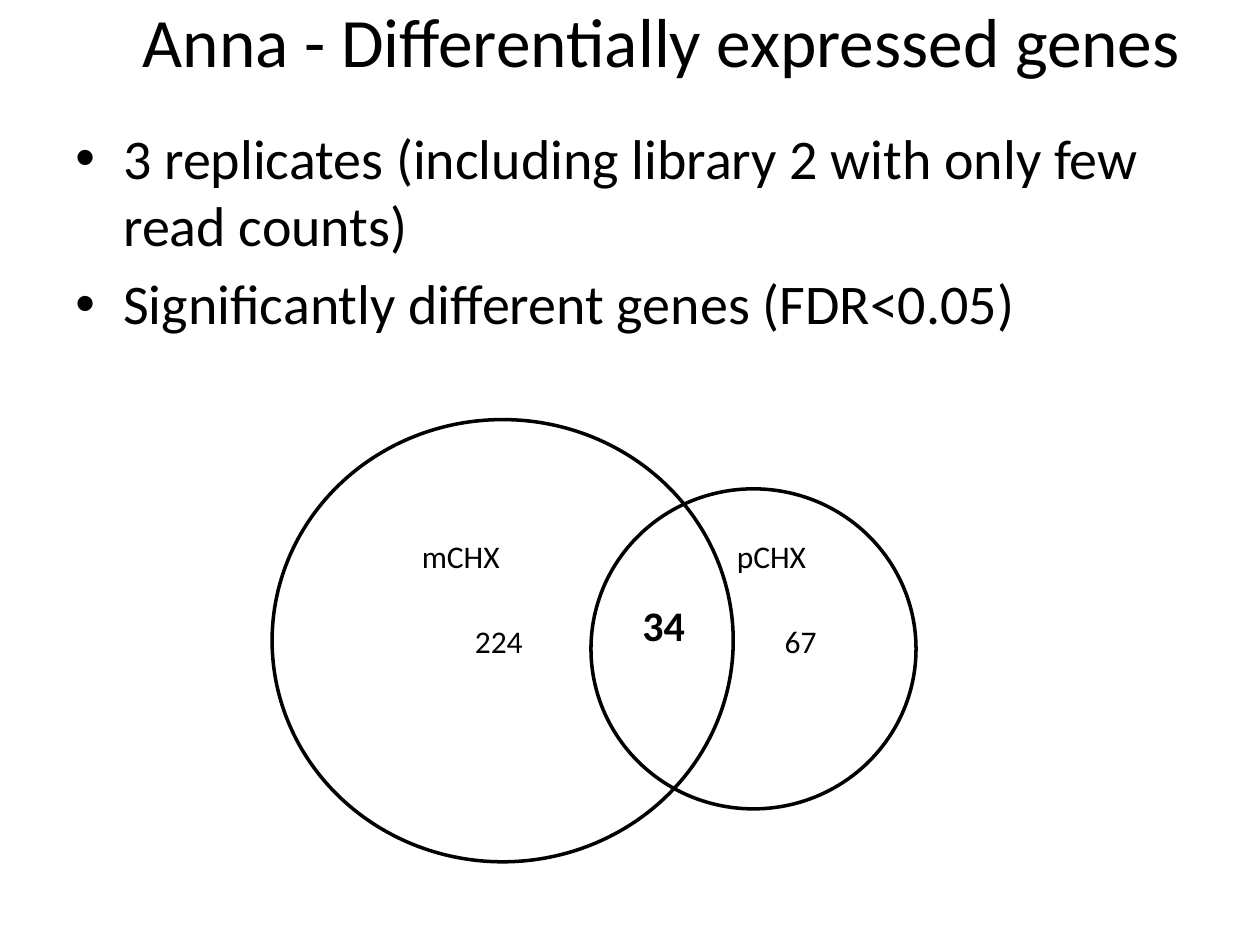
from dataclasses import dataclass

from lxml.etree import SubElement
from pptx import Presentation
from pptx.dml.color import RGBColor
from pptx.enum.shapes import MSO_SHAPE
from pptx.enum.text import MSO_ANCHOR, MSO_AUTO_SIZE, PP_ALIGN
from pptx.oxml.ns import qn
from pptx.util import Inches, Pt


@dataclass(frozen=True)
class Theme:
    font: str = "Calibri"
    ink: RGBColor = RGBColor(0, 0, 0)
    title: float = 39.6
    body: float = 32
    label: float = 18
    overlap: float = 24
    outline: float = 2


theme = Theme()


def add_run(p, text, size, bold=False):
    r = p.add_run()
    r.text = text
    r.font.name = theme.font
    r.font.size = Pt(size)
    r.font.bold = bold
    r.font.color.rgb = theme.ink


prs = Presentation()
prs.slide_width, prs.slide_height = Inches(10), Inches(7.5)
s = prs.slides.add_slide(prs.slide_layouts[5])

# Title
title = s.shapes.title
title.left, title.top = Inches(0.75), Inches(-0.31)
title.width, title.height = Inches(9), Inches(1.25)
tf = title.text_frame
tf.auto_size = MSO_AUTO_SIZE.NONE
tf.vertical_anchor = MSO_ANCHOR.MIDDLE
p = tf.paragraphs[0]
p.alignment = PP_ALIGN.CENTER
add_run(p, "Anna - Differentially expressed genes", theme.title)

# Bullets
bullets = [
    "3 replicates (including library 2 with only few read counts)",
    "Significantly different genes (FDR<0.05)",
]
body = s.shapes.add_textbox(Inches(0.5), Inches(0.93), Inches(9.28), Inches(5.77))
tf = body.text_frame
tf.word_wrap = True
for i, text in enumerate(bullets):
    p = tf.add_paragraph() if i else tf.paragraphs[0]
    p.space_before = Pt(0.2 * theme.body)
    pPr = p._p.get_or_add_pPr()
    pPr.set("marL", str(Inches(0.38)))
    pPr.set("indent", str(Inches(-0.38)))
    SubElement(pPr, qn("a:buFont"), typeface="Arial")
    SubElement(pPr, qn("a:buChar"), char="•")
    add_run(p, text, theme.body)

# Venn circles: left, top, width, height
circles = [(2.16, 3.33, 3.66, 3.51), (4.69, 3.88, 2.58, 2.54)]
for box in circles:
    circle = s.shapes.add_shape(MSO_SHAPE.OVAL, *map(Inches, box))
    circle.shadow.inherit = False
    circle.fill.background()
    circle.line.color.rgb = theme.ink
    circle.line.width = Pt(theme.outline)

# Venn labels: text, left, top, width, height, size, bold
labels = [
    ("224", 3.67, 4.89, 0.59, 0.4, theme.label, False),
    ("67", 6.13, 4.89, 0.46, 0.4, theme.label, False),
    ("34", 5, 4.71, 0.54, 0.5, theme.overlap, True),
    ("mCHX", 3.25, 4.21, 0.83, 0.4, theme.label, False),
    ("pCHX", 5.75, 4.21, 0.76, 0.4, theme.label, False),
]
for text, *box, size, bold in labels:
    tf = s.shapes.add_textbox(*map(Inches, box)).text_frame
    tf.word_wrap = False
    tf.auto_size = MSO_AUTO_SIZE.SHAPE_TO_FIT_TEXT
    add_run(tf.paragraphs[0], text, size, bold)

prs.save("out.pptx")
